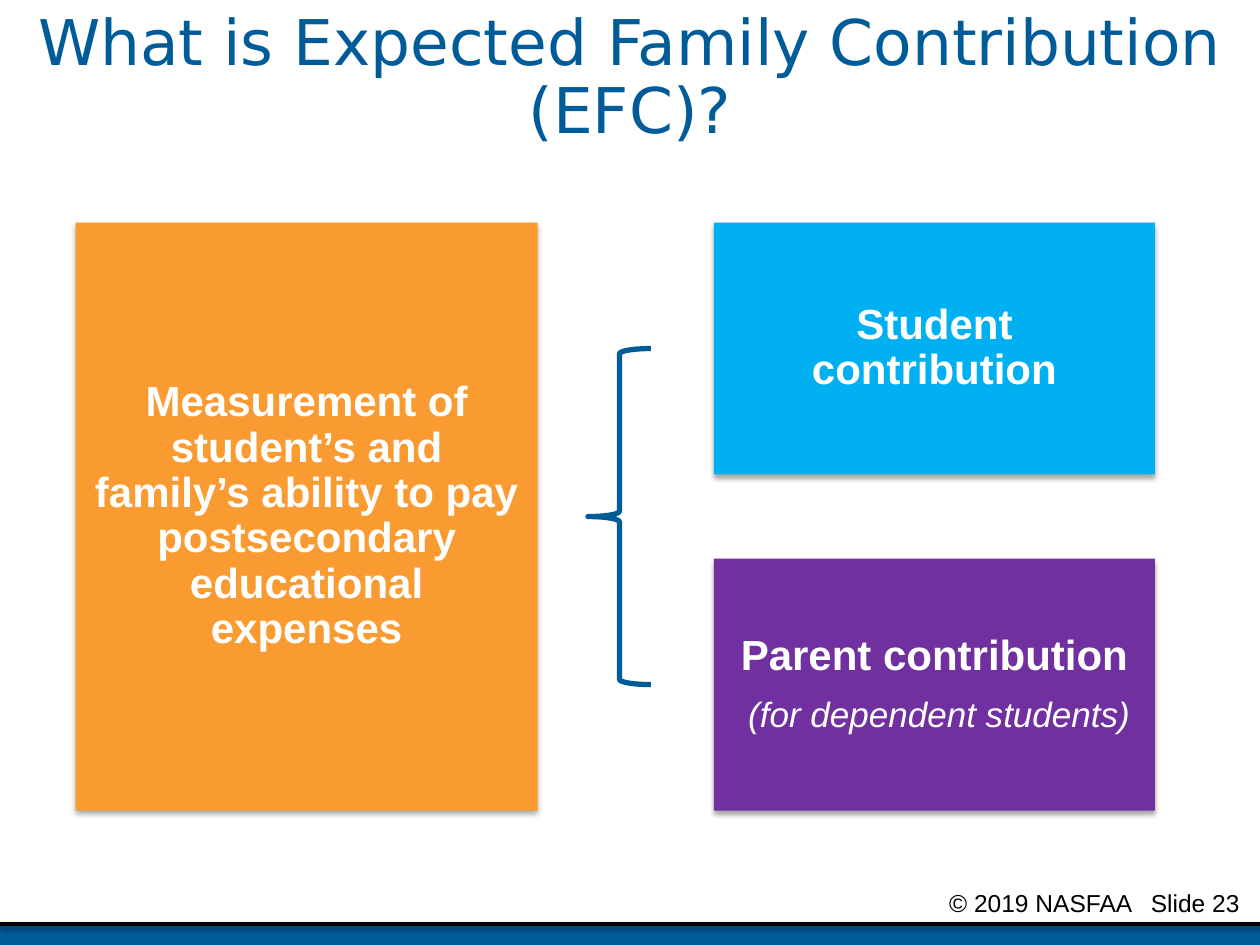
from lxml import etree
from pptx import Presentation, util as u
from pptx.dml.color import RGBColor
from pptx.enum import shapes, text
from pptx.oxml.ns import qn

THEME = {
    "blue": RGBColor.from_string("005B99"),
    "orange": RGBColor.from_string("FA9B32"),
    "sky": RGBColor.from_string("00B0F0"),
    "purple": RGBColor.from_string("7030A0"),
    "white": RGBColor.from_string("FFFFFF"),
    "black": RGBColor.from_string("000000"),
    "body_font": "Arial", "title_font": "DejaVu Sans",
    "title": 36, "statement": 24, "note": 20, "footer": 14,
}
COLUMNS, ROWS = 60, 45

deck = Presentation()
deck.slide_width, deck.slide_height = u.Inches(10), u.Inches(7.5)
page = deck.slides.add_slide(deck.slide_layouts.get_by_name("Title Only"))


def place(left, top, width, height):
    """Turn grid columns and rows into slide lengths."""
    column, row = deck.slide_width / COLUMNS, deck.slide_height / ROWS
    return [round(n) for n in (left * column, top * row, width * column, height * row)]


def add_shadow(item, opacity, blur, distance):
    """Give an item a soft black shadow straight below it."""
    properties = item._element.spPr
    for old in properties.findall(qn("a:effectLst")):
        properties.remove(old)
    effects = etree.SubElement(properties, qn("a:effectLst"))
    shadow = etree.SubElement(
        effects, qn("a:outerShdw"), blurRad=str(u.Pt(blur)), dist=str(u.Pt(distance)),
        dir="5400000", rotWithShape="0")
    black = etree.SubElement(shadow, qn("a:srgbClr"), val="000000")
    etree.SubElement(black, qn("a:alpha"), val=str(opacity * 1000))


# Footer
band = page.shapes.add_shape(shapes.MSO_SHAPE.RECTANGLE, *place(0, 44, COLUMNS, 1))
band.shadow.inherit = False
band.fill.solid()
band.fill.fore_color.rgb = THEME["blue"]
band.line.fill.background()

left, top, width, _ = place(0, 44, COLUMNS, 0)
rule = page.shapes.add_connector(shapes.MSO_CONNECTOR.STRAIGHT, left, top, left + width, top)
rule.line.color.rgb = THEME["black"]
rule.line.width = u.Pt(2)
add_shadow(rule, opacity=38, blur=3.1, distance=1.6)

footer = page.shapes.add_textbox(*place(45.2, 42, 14.8, 1.5))
frame = footer.text_frame
frame.word_wrap = True
frame.margin_left = frame.margin_right = 0
para = frame.paragraphs[0]
para.text = "© 2019 NASFAA\tSlide 23"
tabs = etree.SubElement(para._p.get_or_add_pPr(), qn("a:tabLst"))
etree.SubElement(tabs, qn("a:tab"), pos=str(u.Inches(1.6)), algn="l")
for span in para.runs:
    span.font.name, span.font.size = THEME["body_font"], u.Pt(THEME["footer"])
    span.font.color.rgb = THEME["black"]

# Definition and its two parts
BOXES = [
    ((3.6, 10.6, 22, 28), "orange",
     ["Measurement of student’s and family’s ability to pay postsecondary educational expenses"]),
    ((34, 10.6, 21, 12), "sky", ["Student contribution"]),
    ((34, 26.6, 21, 12), "purple", ["Parent contribution", " (for dependent students)"]),
]
for cells, color, lines in BOXES:
    box = page.shapes.add_shape(shapes.MSO_SHAPE.RECTANGLE, *place(*cells))
    box.fill.solid()
    box.fill.fore_color.rgb = THEME[color]
    box.line.fill.background()
    add_shadow(box, opacity=35, blur=3.1, distance=1.8)
    frame = box.text_frame
    frame.word_wrap = True
    frame.vertical_anchor = text.MSO_ANCHOR.MIDDLE
    frame.margin_left = frame.margin_right = u.Inches(0.15)
    frame.margin_top = frame.margin_bottom = u.Inches(0.15)
    frame.text = "\n".join(lines)
    for index, para in enumerate(frame.paragraphs):
        is_note = index > 0
        para.alignment = text.PP_ALIGN.CENTER
        para.line_spacing = 0.9
        para.space_after = u.Pt(10)
        font = para.runs[0].font
        font.name = THEME["body_font"]
        font.size = u.Pt(THEME["note" if is_note else "statement"])
        font.bold, font.italic = not is_note, is_note
        font.color.rgb = THEME["white"]

brace = page.shapes.add_shape(shapes.MSO_SHAPE.LEFT_BRACE, *place(28, 16.6, 3, 16))
brace.shadow.inherit = False
brace.fill.background()
brace.line.color.rgb = THEME["blue"]
brace.line.width = u.Pt(3)

# Title
title = page.shapes.title
title.left, title.top, title.width, title.height = place(1, 0, 58, 7.5)
frame = title.text_frame
frame.text = "What is Expected Family Contribution (EFC)?"
frame.word_wrap = True
frame.auto_size = text.MSO_AUTO_SIZE.NONE
frame.vertical_anchor = text.MSO_ANCHOR.MIDDLE
para = frame.paragraphs[0]
para.alignment = text.PP_ALIGN.CENTER
para.line_spacing = 0.9
font = para.runs[0].font
font.name, font.size = THEME["title_font"], u.Pt(THEME["title"])
font.color.rgb = THEME["blue"]

deck.save("out.pptx")
